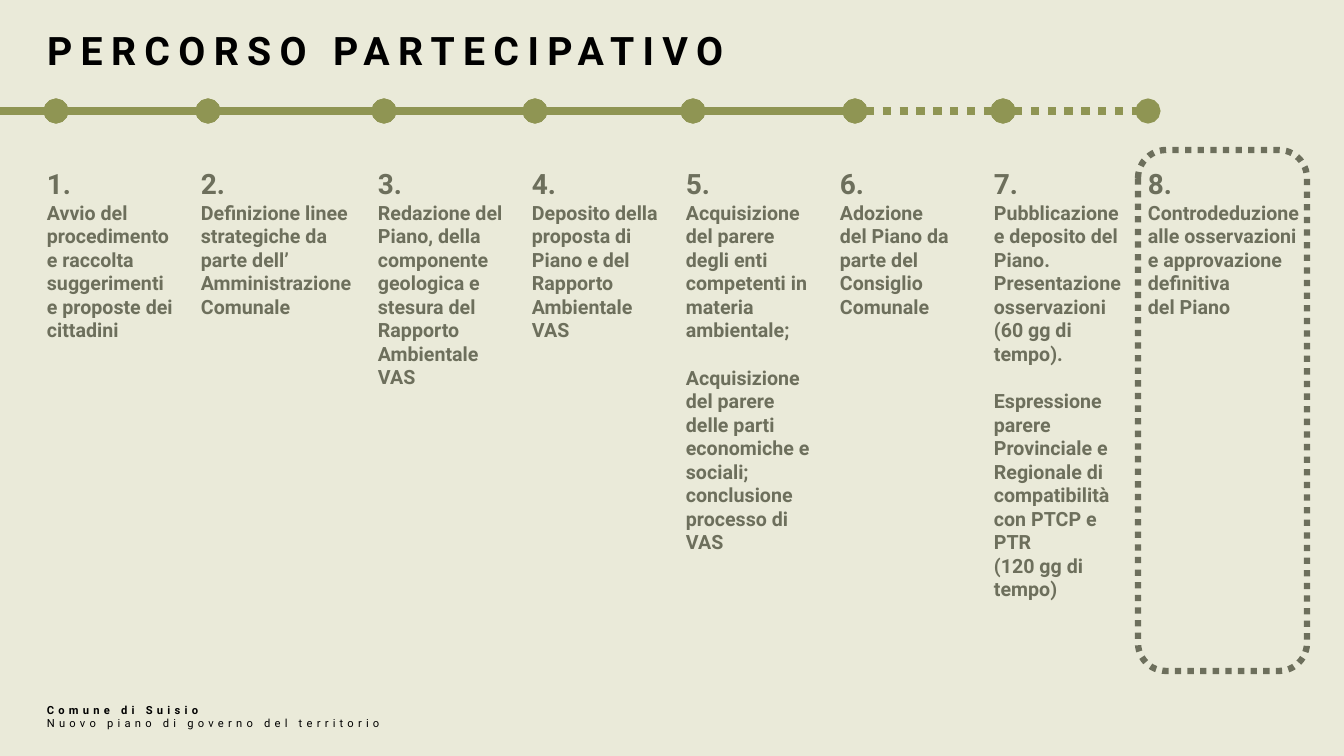
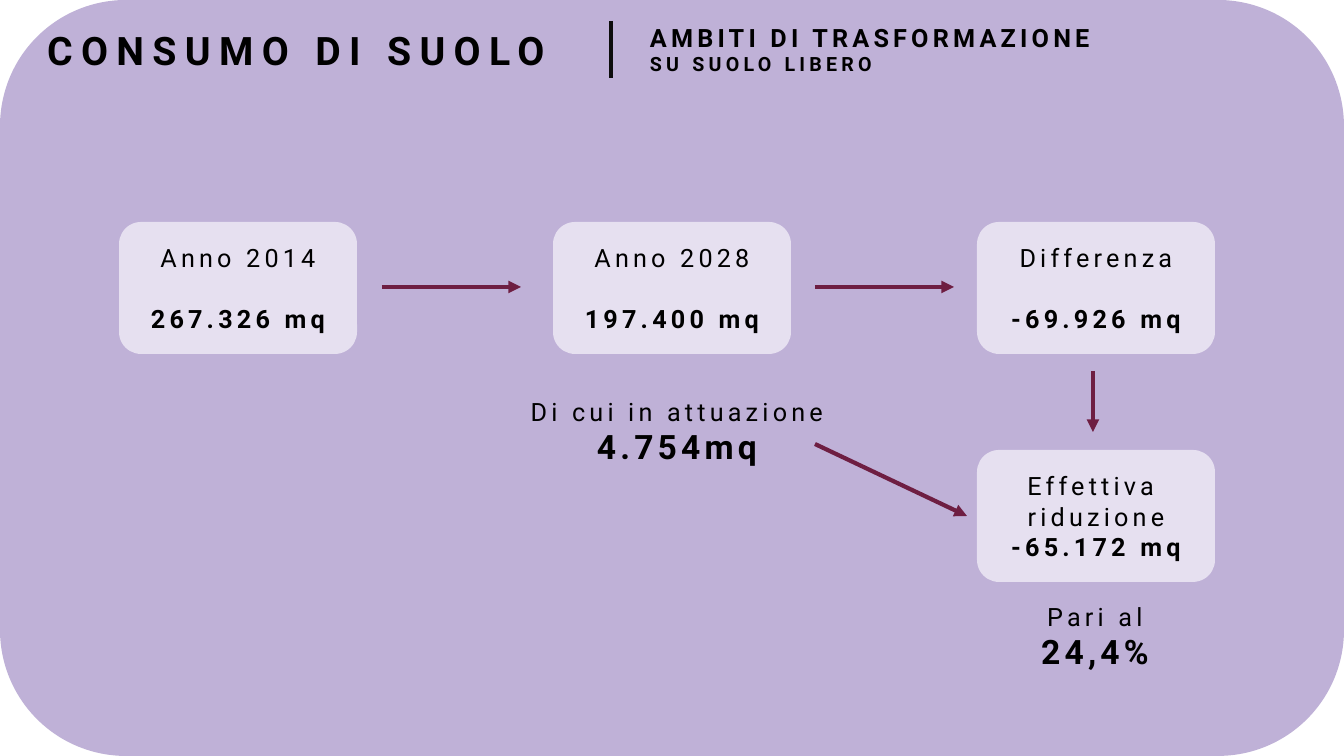
"""Build two slides on a town plan: the path of steps and the land use."""
from dataclasses import dataclass
from itertools import pairwise

from lxml.etree import SubElement
from pptx import Presentation
from pptx.dml.color import RGBColor
from pptx.enum.dml import MSO_LINE
from pptx.enum.shapes import MSO_CONNECTOR, MSO_SHAPE
from pptx.enum.text import MSO_ANCHOR, MSO_AUTO_SIZE, PP_ALIGN
from pptx.oxml.ns import qn
from pptx.util import Pt

WIDE, HIGH = 1344, 756
SCALE = 12192000 / WIDE
FONT = "Roboto"
DOTS = MSO_LINE.ROUND_DOT
LEFT, MID = PP_ALIGN.LEFT, PP_ALIGN.CENTER
TOP, CORE = MSO_ANCHOR.TOP, MSO_ANCHOR.MIDDLE
FIXED = MSO_AUTO_SIZE.NONE
ROUND = MSO_SHAPE.ROUNDED_RECTANGLE
STRAIGHT = MSO_CONNECTOR.STRAIGHT
COLORS = {
    "sand": "EAEAD9", "gray": "6D6F5C", "olive": "8F9553", "black": "000000",
    "ink": "0D0D0D", "lilac": "BFB1D7", "pale": "E6E0F0", "wine": "6E1E42",
}
MARGIN = 37


@dataclass
class Line:
    """One paragraph of text with its look."""
    text: str
    size: int = 18
    bold: bool = False
    space: int = 3
    gap: int = 0
    color: str = "black"


@dataclass
class Step:
    """One step of the path; each group of lines stands apart."""
    groups: tuple
    width: int = 151


@dataclass
class Card:
    """One rounded card with its lines."""
    x: int
    y: int
    lines: list


@dataclass
class Arrow:
    """One arrow given by its two ends."""
    x1: int
    y1: int
    x2: int
    y2: int


STEPS = [
    Step((("Avvio del procedimento e raccolta suggerimenti e proposte dei cittadini",),)),
    Step((("Definizione linee strategiche da parte dell’", "Amministrazione Comunale"),), 174),
    Step((("Redazione del Piano, della componente geologica e stesura del "
           "Rapporto Ambientale VAS",),)),
    Step((("Deposito della proposta di Piano e del Rapporto Ambientale VAS",),)),
    Step((("Acquisizione", "del parere degli enti competenti in materia ambientale;"),
          ("Acquisizione del parere delle parti economiche e sociali; "
           "conclusione processo di VAS",))),
    Step((("Adozione", "del Piano da parte del Consiglio Comunale"),)),
    Step((("Pubblicazione e deposito del Piano.",
           "Presentazione osservazioni (60 gg di tempo)."),
          ("Espressione parere Provinciale e Regionale di compatibilità con PTCP e PTR",
           "(120 gg di tempo)"))),
    Step((("Controdeduzione alle osservazioni e approvazione definitiva", "del Piano"),), 174),
]
NODES = [0, 56, 208, 384, 535, 693, 855, 1003, 1148]
DONE = 855


def px(num: int) -> int:
    """Turn px into EMU."""
    return round(num * SCALE)


def tint(name: str) -> RGBColor:
    """Look up a colour by name."""
    return RGBColor.from_string(COLORS[name])


def write(shape, lines: list, **form) -> None:
    """Fill a shape with lines of text."""
    frame = shape.text_frame
    align = form.pop("align", LEFT)
    look = {"auto_size": FIXED, "word_wrap": True, "vertical_anchor": TOP} | form
    for key, val in look.items():
        setattr(frame, key, val)
    for num, line in enumerate(lines):
        para = frame.add_paragraph() if num else frame.paragraphs[0]
        para.alignment = align
        if line.gap:
            para.space_before = Pt(line.gap)
        run = para.add_run()
        run.text = line.text
        face = {"name": FONT, "size": Pt(line.size), "bold": line.bold}
        for key, val in face.items():
            setattr(run.font, key, val)
        run.font.color.rgb = tint(line.color)
        if line.space:
            run._r.get_or_add_rPr().set("spc", str(line.space * 100))


def add_text(slide, x: int, y: int, w: int, h: int, lines: list, **form) -> None:
    """Add a text box."""
    write(slide.shapes.add_textbox(px(x), px(y), px(w), px(h)), lines, **form)


def add_title(slide, text: str, w: int) -> None:
    """Place and fill the title."""
    title = slide.shapes.title
    spot = {"left": MARGIN, "top": 21, "width": w, "height": 57}
    for key, val in spot.items():
        setattr(title, key, px(val))
    write(title, [Line(text, 28, True, 6)], word_wrap=False)


def add_panel(slide, x: int, y: int, w: int, h: int, fill: str = ""):
    """Add a rounded box with no line, filled if a colour is named."""
    panel = slide.shapes.add_shape(ROUND, px(x), px(y), px(w), px(h))
    panel.shadow.inherit = False
    panel.line.fill.background()
    if fill:
        panel.fill.solid()
        panel.fill.fore_color.rgb = tint(fill)
    else:
        panel.fill.background()
    return panel


def stroke(line, color: str, width: float, dash=None) -> None:
    """Set the look of a line."""
    line.color.rgb = tint(color)
    line.width = Pt(width)
    if dash is not None:
        line.dash_style = dash


def add_line(slide, ends: Arrow, color: str, width: float,
             dash=None, head: str = "", tail: str = "") -> None:
    """Add a straight line with the named end marks."""
    line = slide.shapes.add_connector(
        STRAIGHT, px(ends.x1), px(ends.y1), px(ends.x2), px(ends.y2))
    stroke(line.line, color, width, dash)
    for tag, kind in (("a:headEnd", head), ("a:tailEnd", tail)):
        if kind:
            SubElement(line.line._get_or_add_ln(), qn(tag)).set("type", kind)
    SubElement(line.element.spPr, qn("a:effectLst"))


def draw_path(slide) -> None:
    """Draw the slide of steps."""
    slide.background.fill.solid()
    slide.background.fill.fore_color.rgb = tint("sand")
    add_title(slide, "PERCORSO PARTECIPATIVO", 724)
    add_text(slide, MARGIN, 698, 379, 37, [
        Line("Comune di Suisio", 8, True),
        Line("Nuovo piano di governo del territorio", 8)])
    frame = add_panel(slide, 1138, 150, 169, 521)
    stroke(frame.line, "gray", 4.5, DOTS)
    x = MARGIN
    for num, step in enumerate(STEPS, 1):
        lines = [Line(f"{num}.", 20, True, 0, color="gray")]
        for part, group in enumerate(step.groups):
            for row, text in enumerate(group):
                gap = 17 if part and not row else 0
                lines.append(Line(text, 14, True, 0, gap, "gray"))
        add_text(slide, x, 162, step.width, 448, lines)
        x += step.width + 3
    for start, end in pairwise(NODES):
        add_line(slide, Arrow(start, 111, end, 111), "olive", 6,
                 DOTS if start >= DONE else None, "oval" if start else "", "oval")


def draw_land(slide) -> None:
    """Draw the slide of land use."""
    back = add_panel(slide, 0, 0, WIDE, HIGH, "lilac")
    slide.shapes.element.insert(2, back.element)
    add_title(slide, "CONSUMO DI SUOLO", 533)
    add_line(slide, Arrow(611, 21, 611, 78), "ink", 3)
    add_text(slide, 640, 17, 483, 65, [
        Line("AMBITI DI TRASFORMAZIONE", 18, True),
        Line("SU SUOLO LIBERO", 14, True)])
    cards = [
        Card(x, 222, [Line(name), Line(area, bold=True, gap=22)])
        for x, name, area in (
            (119, "Anno 2014", "267.326 mq"),
            (553, "Anno 2028", "197.400 mq"),
            (977, "Differenza", "-69.926 mq"))
    ]
    cards.append(Card(977, 450, [
        Line("Effettiva "), Line("riduzione"), Line("-65.172 mq", bold=True)]))
    for card in cards:
        panel = add_panel(slide, card.x, card.y, 238, 132, "pale")
        write(panel, card.lines, align=MID, vertical_anchor=CORE)
    for x, y, w, name, value in (
            (507, 391, 340, "Di cui in attuazione", "4.754mq"),
            (1015, 596, 160, "Pari al", "24,4%")):
        add_text(slide, x, y, w, 82, [Line(name), Line(value, 24, True)], align=MID)
    for ends in (Arrow(382, 287, 521, 287), Arrow(815, 287, 954, 287),
                 Arrow(815, 444, 967, 516), Arrow(1093, 371, 1093, 432)):
        add_line(slide, ends, "wine", 3, tail="triangle")


def main() -> None:
    """Build and save the deck."""
    deck = Presentation()
    deck.slide_width, deck.slide_height = px(WIDE), px(HIGH)
    for draw in (draw_path, draw_land):
        draw(deck.slides.add_slide(deck.slide_layouts[5]))
    deck.save("out.pptx")


if __name__ == "__main__":
    main()
